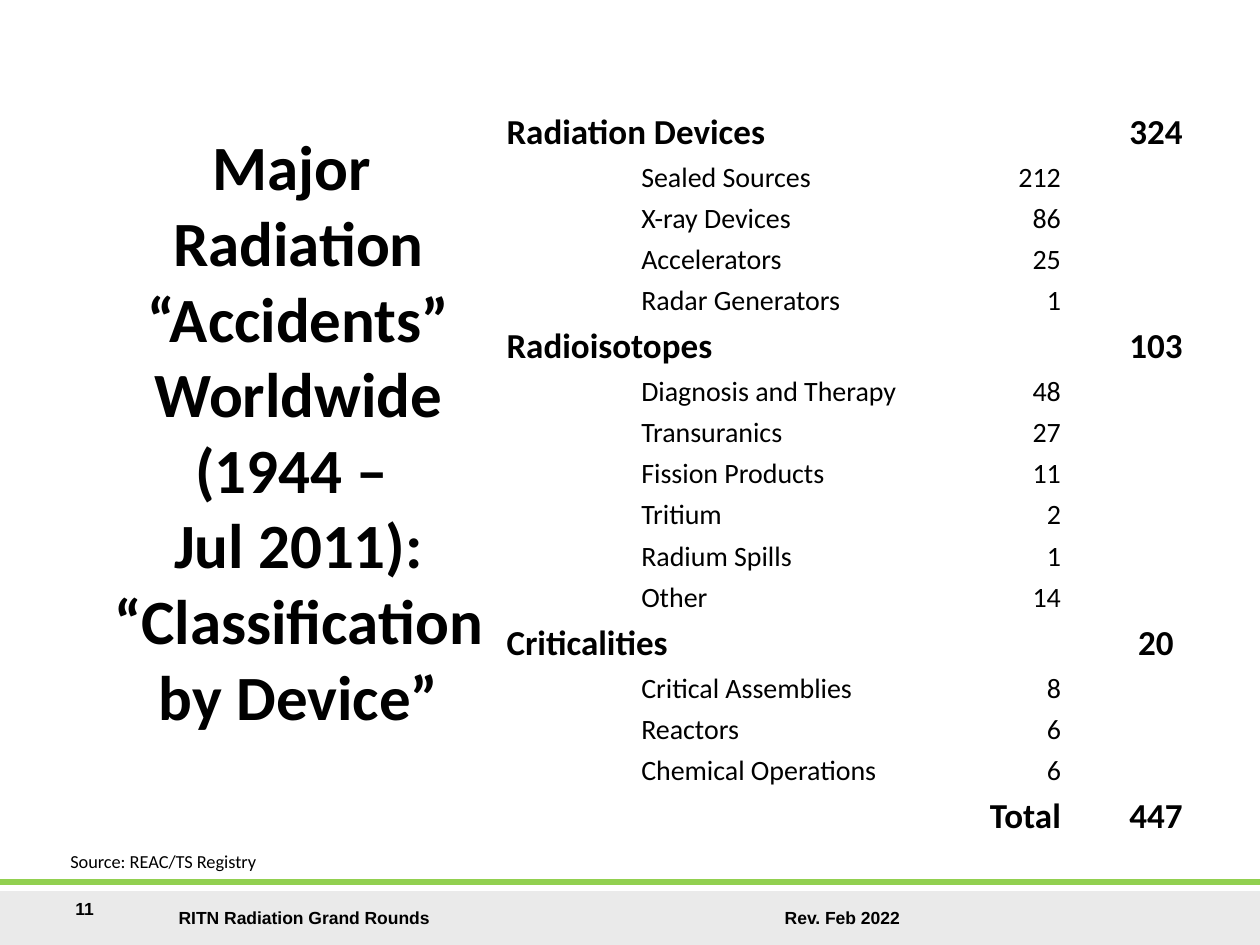
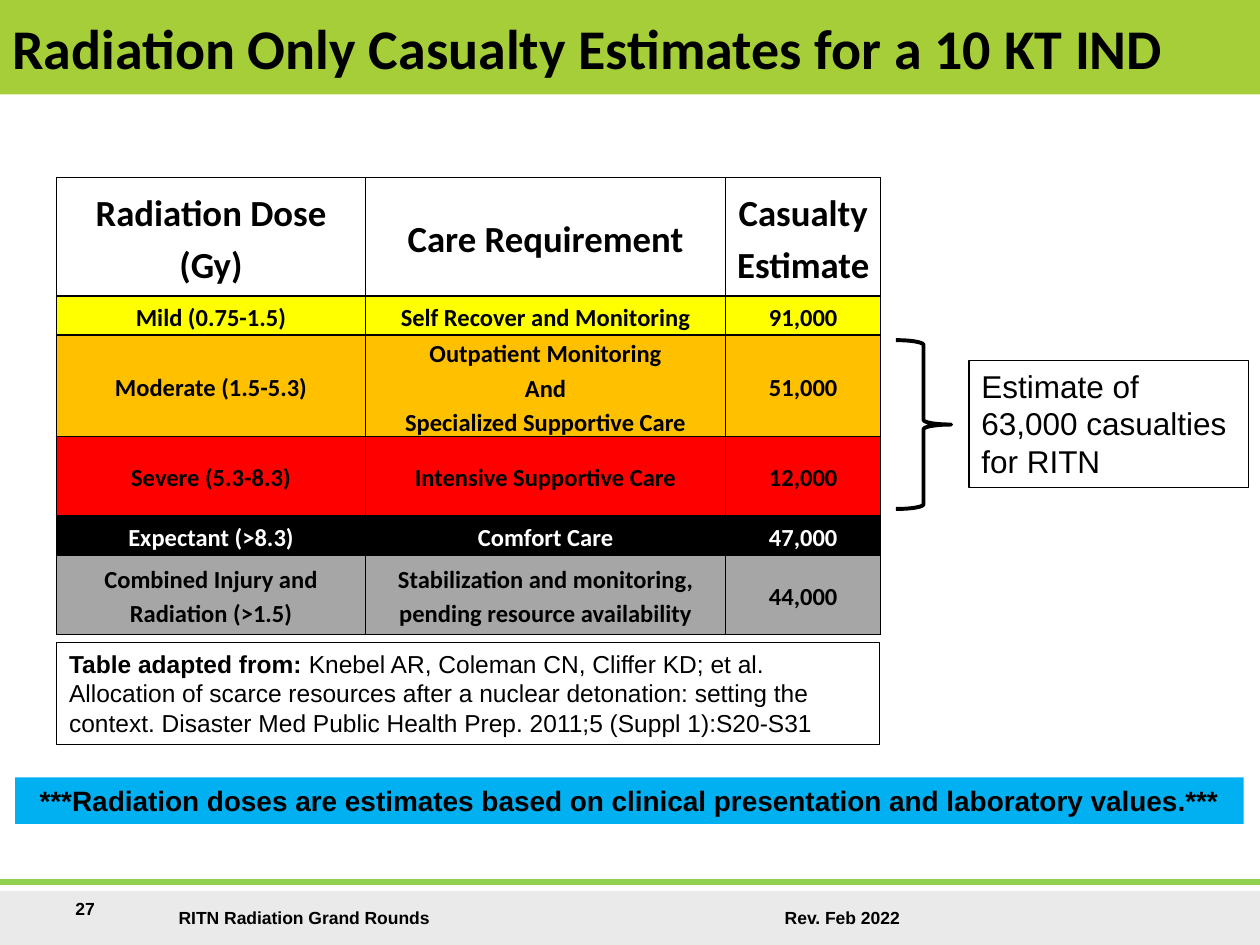
from dataclasses import dataclass, replace
from typing import NamedTuple, Optional

from lxml.etree import SubElement
from pptx import Presentation
from pptx.dml.color import RGBColor
from pptx.enum.shapes import MSO_CONNECTOR as Connector, MSO_SHAPE as Preset
from pptx.enum.text import MSO_ANCHOR as Anchor, PP_ALIGN as Align
from pptx.oxml.ns import qn
from pptx.util import Emu, Pt

EMU_PER_PX = 9144


def px(length: int) -> Emu:
    return Emu(length * EMU_PER_PX)


@dataclass(frozen=True)
class Theme:
    black: str = "000000"
    white: str = "FFFFFF"
    footer_gray: str = "EAEAEA"
    footer_green: str = "92D050"
    title_green: str = "A6CE39"
    note_blue: str = "00B0F0"
    mild: str = "FFFF00"
    moderate: str = "FFC000"
    severe: str = "FF0000"
    combined: str = "A6A6A6"
    heading_font: str = "Calibri"
    body_font: str = "Arial"
    side_title: float = 36
    band_title: float = 32
    table_header: float = 21
    category: float = 20
    estimate: float = 18
    item: float = 16
    dose: float = 14
    source: float = 10.5
    footer: float = 10


THEME = Theme()


class Box(NamedTuple):
    left: int
    top: int
    width: int
    height: int


class Run(NamedTuple):
    text: str
    bold: bool


@dataclass(frozen=True)
class TextStyle:
    size: float
    font: str = THEME.heading_font
    color: str = THEME.black
    bold: bool = False
    align: Align = Align.LEFT
    anchor: Anchor = Anchor.TOP
    spacing: Optional[float] = None
    tab: Optional[int] = None


class Outline(NamedTuple):
    color: str
    width: float


class Margins(NamedTuple):
    side: int
    end: int


class Entry(NamedTuple):
    label: str
    count: str


class Category(NamedTuple):
    name: str
    total: str
    merge_start: int
    entries: list[Entry]


class DoseRow(NamedTuple):
    cells: tuple[str, str, str]
    height: int
    fill: Optional[str]
    style: TextStyle


FOOTER = TextStyle(THEME.footer, THEME.body_font, bold=True, tab=481)
SIDE_TITLE = TextStyle(THEME.side_title, bold=True, align=Align.CENTER, anchor=Anchor.MIDDLE)
BAND_TITLE = TextStyle(THEME.band_title, bold=True, anchor=Anchor.MIDDLE)
CATEGORY = TextStyle(THEME.category, bold=True)
ITEM = TextStyle(THEME.item)
DOSE = TextStyle(THEME.dose, bold=True, align=Align.CENTER, anchor=Anchor.MIDDLE, spacing=1.15)
DOSE_HEADER = replace(DOSE, size=THEME.table_header)
THIN_BLACK = Outline(THEME.black, 0.75)

CATEGORIES = [
    Category("Radiation Devices", "324", 1, [
        Entry("Sealed Sources", "212"), Entry("X-ray Devices", "86"),
        Entry("Accelerators", "25"), Entry("Radar Generators", "1")]),
    Category("Radioisotopes", "103", 2, [
        Entry("Diagnosis and Therapy", "48"), Entry("Transuranics", "27"),
        Entry("Fission Products", "11"), Entry("Tritium", "2"),
        Entry("Radium Spills", "1"), Entry("Other", "14")]),
    Category("Criticalities", "20", 1, [
        Entry("Critical Assemblies", "8"), Entry("Reactors", "6"),
        Entry("Chemical Operations", "6")]),
]

DOSE_ROWS = [
    DoseRow(("Radiation Dose (Gy)", "Care Requirement", "Casualty Estimate"),
            94, None, DOSE_HEADER),
    DoseRow(("Mild (0.75-1.5)", "Self Recover and Monitoring", "91,000"),
            31, THEME.mild, DOSE),
    DoseRow(("Moderate (1.5-5.3)",
             "Outpatient Monitoring\nAnd\nSpecialized Supportive Care", "51,000"),
            78, THEME.moderate, DOSE),
    DoseRow(("Severe (5.3-8.3)", "Intensive Supportive Care", "12,000"),
            63, THEME.severe, DOSE),
    DoseRow(("Expectant (>8.3)", "Comfort Care", "47,000"),
            31, THEME.black, replace(DOSE, color=THEME.white)),
    DoseRow(("Combined Injury and Radiation (>1.5)",
             "Stabilization and monitoring, pending resource availability", "44,000"),
            63, THEME.combined, DOSE),
]


def rgb(color: str) -> RGBColor:
    return RGBColor.from_string(color)


def add_runs(paragraph, runs: list[Run], style: TextStyle) -> None:
    paragraph.alignment = style.align
    if style.spacing:
        paragraph.line_spacing = style.spacing
    if style.tab:
        tabs = SubElement(paragraph._p.get_or_add_pPr(), qn("a:tabLst"))
        SubElement(tabs, qn("a:tab"), pos=str(px(style.tab)), algn="l")
    for text, bold in runs:
        for index, line in enumerate(text.split("\v")):
            if index:
                paragraph.add_line_break()
            run = paragraph.add_run()
            run.text = line
            run.font.name = style.font
            run.font.size = Pt(style.size)
            run.font.bold = bold
            run.font.color.rgb = rgb(style.color)


def write_lines(frame, text: str, style: TextStyle) -> None:
    for index, line in enumerate(text.split("\n")):
        paragraph = frame.add_paragraph() if index else frame.paragraphs[0]
        add_runs(paragraph, [Run(line, style.bold)], style)


def add_label(slide, box: Box, text: str, style: TextStyle) -> None:
    frame = slide.shapes.add_textbox(*map(px, box)).text_frame
    frame.word_wrap = True
    frame.vertical_anchor = style.anchor
    write_lines(frame, text, style)


def add_panel(slide, box: Box, fill: Optional[str] = None, outline: Optional[Outline] = None,
              runs: Optional[list[Run]] = None, style: Optional[TextStyle] = None,
              preset: Preset = Preset.RECTANGLE) -> None:
    shape = slide.shapes.add_shape(preset, *map(px, box))
    shape.shadow.inherit = False
    if fill:
        shape.fill.solid()
        shape.fill.fore_color.rgb = rgb(fill)
    else:
        shape.fill.background()
    if outline:
        shape.line.color.rgb = rgb(outline.color)
        shape.line.width = Pt(outline.width)
    else:
        shape.line.fill.background()
    if runs and style:
        shape.text_frame.word_wrap = True
        shape.text_frame.vertical_anchor = style.anchor
        add_runs(shape.text_frame.paragraphs[0], runs, style)


def add_rule(slide, top: int, outline: Outline) -> None:
    rule = slide.shapes.add_connector(Connector.STRAIGHT, 0, px(top), px(1000), px(top))
    rule.line.color.rgb = rgb(outline.color)
    rule.line.width = Pt(outline.width)
    SubElement(rule._element.spPr, qn("a:effectLst"))


def add_base_slide(presentation, number: str):
    slide = presentation.slides.add_slide(presentation.slide_layouts[6])
    add_panel(slide, Box(0, 708, 1000, 42), THEME.footer_gray, Outline(THEME.footer_gray, 0.75))
    add_label(slide, Box(132, 715, 620, 27), "RITN Radiation Grand Rounds\tRev. Feb 2022", FOOTER)
    add_rule(slide, 700, Outline(THEME.footer_green, 3))
    add_label(slide, Box(50, 708, 67, 42), number, replace(FOOTER, tab=None))
    return slide


def add_grid(slide, left: int, top: int, widths: list[int], heights: list[int]):
    box = Box(left, top, sum(widths), sum(heights))
    table = slide.shapes.add_table(len(heights), len(widths), *map(px, box)).table
    table.first_row = table.horz_banding = False
    for column, width in zip(table.columns, widths):
        column.width = px(width)
    for row, height in zip(table.rows, heights):
        row.height = px(height)
    return table


def format_cell(cell, text: str, style: TextStyle, margins: Margins,
                fill: Optional[str] = None, border: Optional[Outline] = None) -> None:
    cell.margin_left = cell.margin_right = px(margins.side)
    cell.margin_top = cell.margin_bottom = px(margins.end)
    cell.vertical_anchor = style.anchor
    if border:
        properties = cell._tc.get_or_add_tcPr()
        for side in ("lnL", "lnR", "lnT", "lnB"):
            line = SubElement(properties, qn(f"a:{side}"), w=str(Pt(border.width)))
            solid = SubElement(line, qn("a:solidFill"))
            SubElement(solid, qn("a:srgbClr"), val=border.color)
    if fill:
        cell.fill.solid()
        cell.fill.fore_color.rgb = rgb(fill)
    else:
        cell.fill.background()
    if text:
        write_lines(cell.text_frame, text, style)
    else:
        SubElement(cell.text_frame.paragraphs[0]._p, qn("a:endParaRPr"), sz=str(int(style.size * 100)))


def add_accident_table(slide) -> None:
    rows: list[tuple[dict[int, str], TextStyle, tuple[int, int]]] = []
    for category in CATEGORIES:
        rows.append(({0: category.name, 4: category.total}, CATEGORY, (0, 3)))
        start = category.merge_start
        count_column = 3 if start == 1 else 2
        rows += [({1: entry.label, count_column: entry.count}, ITEM, (start, start + 1))
                 for entry in category.entries]
    rows.append(({3: "Total", 4: "447"}, CATEGORY, (1, 2)))
    heights = [37 if style is CATEGORY else 30 for _, style, _ in rows]
    table = add_grid(slide, 392, 85, [107, 248, 15, 90, 131], heights)
    alignments = [Align.LEFT, Align.LEFT, Align.RIGHT, Align.RIGHT, Align.CENTER]
    for index, (texts, style, (first, last)) in enumerate(rows):
        for column, align in enumerate(alignments):
            format_cell(table.cell(index, column), texts.get(column, ""),
                        replace(style, align=align), Margins(10, 3))
        table.cell(index, first).merge(table.cell(index, last))


def add_dose_table(slide) -> None:
    table = add_grid(slide, 45, 141, [245, 286, 123], [row.height for row in DOSE_ROWS])
    for index, row in enumerate(DOSE_ROWS):
        for column, text in enumerate(row.cells):
            format_cell(table.cell(index, column), text, row.style, Margins(6, 0),
                        row.fill, Outline(THEME.black, 1))


def build_accidents(presentation) -> None:
    slide = add_base_slide(presentation, "11")
    add_label(slide, Box(50, 0, 374, 683),
              "Major \vRadiation “Accidents” Worldwide (1944 – \vJul 2011): “Classification by Device”",
              SIDE_TITLE)
    add_accident_table(slide)
    add_label(slide, Box(46, 670, 904, 28), "Source: REAC/TS Registry", TextStyle(THEME.source))


def build_casualties(presentation) -> None:
    slide = add_base_slide(presentation, "27")
    add_dose_table(slide)
    citation = [
        Run("Table adapted from: ", True),
        Run("Knebel AR, Coleman CN, Cliffer KD; et al. Allocation of scarce resources after a "
            "nuclear detonation: setting the context. Disaster Med Public Health Prep. 2011;5 "
            "(Suppl 1):S20-S31", False),
    ]
    add_panel(slide, Box(45, 510, 653, 81), THEME.white, THIN_BLACK, citation,
              TextStyle(THEME.dose, THEME.body_font))
    add_panel(slide, Box(711, 270, 44, 134), outline=Outline(THEME.black, 2.25),
              preset=Preset.RIGHT_BRACE)
    add_panel(slide, Box(769, 286, 222, 101), outline=THIN_BLACK,
              runs=[Run("Estimate of 63,000 casualties for RITN", False)],
              style=TextStyle(THEME.estimate, THEME.body_font))
    add_panel(slide, Box(12, 617, 975, 37), THEME.note_blue,
              runs=[Run("***Radiation doses are estimates based on clinical presentation "
                        "and laboratory values.***", True)],
              style=TextStyle(THEME.item, THEME.body_font, align=Align.CENTER))
    add_panel(slide, Box(0, 0, 1000, 75), THEME.title_green,
              runs=[Run("Radiation Only Casualty Estimates for a 10 KT IND", True)],
              style=BAND_TITLE)


def main() -> None:
    presentation = Presentation()
    presentation.slide_width, presentation.slide_height = px(1000), px(750)
    build_accidents(presentation)
    build_casualties(presentation)
    presentation.save("out.pptx")


if __name__ == "__main__":
    main()
